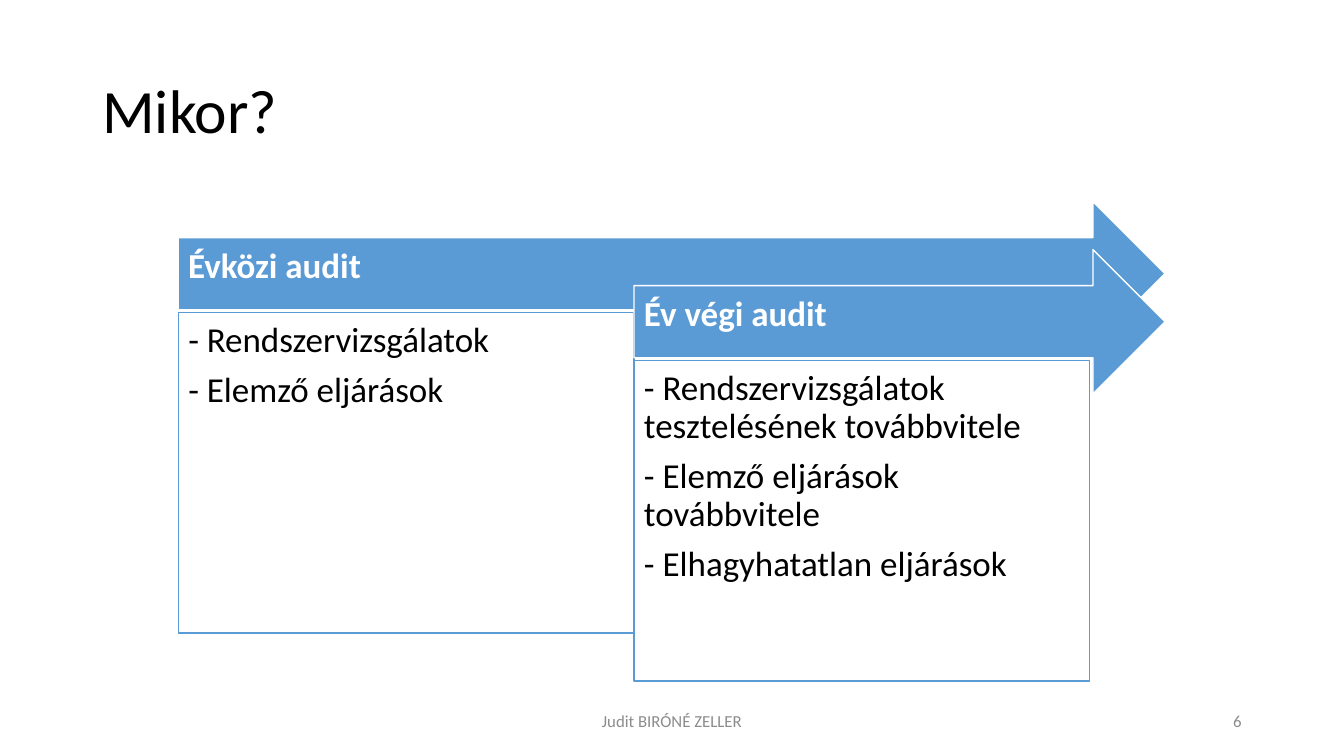
import pptx
import pptx.util
import pptx.dml.color
import pptx.enum.shapes
import pptx.enum.text

Pt = pptx.util.Pt
RGB = pptx.dml.color.RGBColor
KIND = pptx.enum.shapes.MSO_SHAPE
ALIGN = pptx.enum.text.PP_ALIGN
ANCHOR = pptx.enum.text.MSO_ANCHOR

BLUE = RGB(0x5B, 0x9B, 0xD5)
WHITE = RGB(0xFF, 0xFF, 0xFF)
BLACK = RGB(0, 0, 0)
GRAY = RGB(0x8C, 0x8C, 0x8C)

LEFT, TOP, STEP = 127.4, 144, 34.3
BOX_W, BOX_H, BOX_GAP = 325.5, 229, 79.2
ARROW_H, ARROW_END = 103, 832.2
STAGES = [
    ("Évközi audit", ["- Rendszervizsgálatok", "- Elemző eljárások"]),
    ("Év végi audit", [
        "- Rendszervizsgálatok tesztelésének továbbvitele",
        "- Elemző eljárások továbbvitele",
        "- Elhagyhatatlan eljárások",
    ]),
]


class Painter:
    """Draws styled elements on the current slide."""

    font = "Calibri"
    size = 25
    pad = (7.2, 7.2, 7.2, 7.2)

    def __init__(self, slide):
        self.slide = slide

    def fill_text(self, shape, lines, size, color, bold=False, align=ALIGN.LEFT,
                  anchor=ANCHOR.MIDDLE, pad=(7.2, 3.6, 7.2, 3.6), space=0.9, after=0):
        frame = shape.text_frame
        frame.word_wrap = True
        frame.vertical_anchor = anchor
        frame.margin_left, frame.margin_top, frame.margin_right, frame.margin_bottom = map(Pt, pad)
        frame.text = "\n".join(lines)
        for para in frame.paragraphs:
            para.alignment = align
            para.line_spacing = space
            para.space_after = Pt(after)
            for run in para.runs:
                run.font.name = self.font
                run.font.size = Pt(size)
                run.font.bold = bold
                run.font.color.rgb = color

    def label(self, area, text, size, color, **style):
        box = self.slide.shapes.add_textbox(*map(Pt, area))
        self.fill_text(box, [text], size, color, **style)

    def shape(self, kind, area, fill, line):
        item = self.slide.shapes.add_shape(kind, *map(Pt, area))
        item.shadow.inherit = False
        item.fill.solid()
        item.fill.fore_color.rgb = fill
        item.line.color.rgb = line
        item.line.width = Pt(1)
        return item

    def arrow(self, area, text):
        item = self.shape(KIND.RIGHT_ARROW, area, BLUE, WHITE)
        self.fill_text(item, [text], self.size, WHITE, bold=True,
                       pad=(7.2, 7.2, 20, 16.4), after=8.75)

    def panel(self, area, lines):
        item = self.shape(KIND.RECTANGLE, area, WHITE, BLUE)
        self.fill_text(item, lines, self.size, BLACK, anchor=ANCHOR.TOP,
                       pad=self.pad, after=8.75)


def main():
    deck = pptx.Presentation()
    deck.slide_width, deck.slide_height = Pt(960), Pt(540)
    pen = Painter(deck.slides.add_slide(deck.slide_layouts[6]))
    pen.label((66, 28.8, 828, 104.4), "Mikor?", 44, BLACK)
    for i, (head, lines) in enumerate(STAGES):
        x, y = LEFT + i * BOX_W, TOP + i * STEP
        pen.arrow((x, y, ARROW_END - x, ARROW_H), head)
        pen.panel((x, y + BOX_GAP, BOX_W, BOX_H), lines)
    pen.label((318, 500.5, 324, 28.8), "Judit BIRÓNÉ ZELLER", 12, GRAY,
              align=ALIGN.CENTER, space=1)
    pen.label((678, 500.5, 216, 28.8), "6", 12, GRAY, align=ALIGN.RIGHT, space=1)
    deck.save("out.pptx")


if __name__ == "__main__":
    main()
